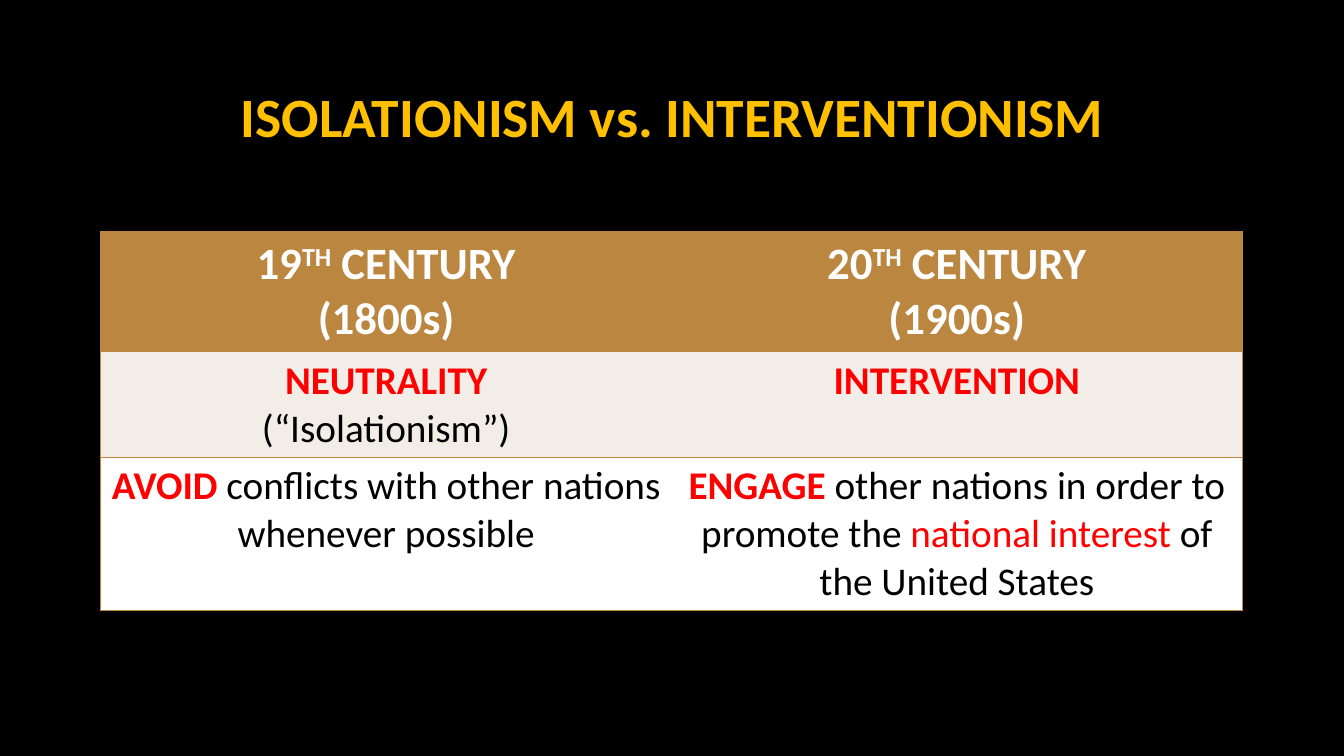
"""Build the slide that sets isolationism against interventionism."""
from dataclasses import dataclass

from lxml import etree
from pptx import Presentation
from pptx.dml.color import RGBColor
from pptx.enum.text import MSO_ANCHOR, PP_ALIGN
from pptx.oxml.ns import qn
from pptx.table import _Cell
from pptx.text.text import TextFrame
from pptx.util import Inches, Pt

CENTER = PP_ALIGN.CENTER
MIDDLE = MSO_ANCHOR.MIDDLE
BLACK = RGBColor(0x00, 0x00, 0x00)
WHITE = RGBColor(0xFF, 0xFF, 0xFF)
GOLD = RGBColor(0xFF, 0xC0, 0x00)
BROWN = RGBColor(0xBB, 0x86, 0x40)
CREAM = RGBColor(0xF3, 0xED, 0xE8)
RED = RGBColor(0xFF, 0x00, 0x00)
FONT = "Calibri"
PLAIN_STYLE = "{2D5ABB26-0587-4C30-8999-92F81FD0307C}"


@dataclass
class Span:
    text: str
    color: RGBColor = BLACK
    bold: bool = False
    raised: bool = False


Lines = list[list[Span]]


@dataclass
class Row:
    height: float
    fill: RGBColor
    size: float
    cells: list[Lines]


def header(number: str, years: str) -> Lines:
    return [
        [Span(number, WHITE, True), Span("TH", WHITE, True, True),
         Span(" CENTURY", WHITE, True)],
        [Span(years, WHITE, True)],
    ]


ROWS = [
    Row(1.19, BROWN, 32, [header("19", "(1800s)"), header("20", "(1900s)")]),
    Row(1.05, CREAM, 28, [
        [[Span("NEUTRALITY", RED, True)], [Span("(“Isolationism”)")]],
        [[Span("INTERVENTION", RED, True)]],
    ]),
    Row(1.52, WHITE, 28, [
        [[Span("AVOID", RED, True),
          Span(" conflicts with other nations whenever possible")]],
        [[Span("ENGAGE", RED, True),
          Span(" other nations in order to promote the "),
          Span("national interest ", RED),
          Span("of the United States")]],
    ]),
]


def write(frame: TextFrame, lines: Lines, size: float) -> None:
    frame.word_wrap = True
    for i, line in enumerate(lines):
        para = frame.add_paragraph() if i else frame.paragraphs[0]
        para.alignment = CENTER
        for span in line:
            run = para.add_run()
            run.text = span.text
            font = run.font
            font.name = FONT
            font.size = Pt(size)
            font.bold = span.bold
            font.color.rgb = span.color
            if span.raised:
                run._r.get_or_add_rPr().set("baseline", "30000")


def border(cell: _Cell, sides: str) -> None:
    props = cell._tc.get_or_add_tcPr()
    for side in sides:
        line = etree.SubElement(props, qn(f"a:ln{side}"), w=str(Pt(1)))
        fill = etree.SubElement(line, qn("a:solidFill"))
        etree.SubElement(fill, qn("a:srgbClr"), val=str(BROWN))


def main() -> None:
    deck = Presentation()
    deck.slide_width = Inches(13.33)
    deck.slide_height = Inches(7.5)
    slide = deck.slides.add_slide(deck.slide_layouts[6])
    back = slide.background.fill
    back.solid()
    back.fore_color.rgb = BLACK

    title = slide.shapes.add_textbox(
        Inches(0.74), Inches(0.49), Inches(11.86), Inches(1.31)).text_frame
    title.vertical_anchor = MIDDLE
    write(title, [[Span("ISOLATIONISM vs. INTERVENTIONISM", GOLD, True)]], 39.6)

    height = sum(row.height for row in ROWS)
    table = slide.shapes.add_table(
        len(ROWS), 2, Inches(1), Inches(2.3), Inches(11.32), Inches(height)).table
    table._tbl.tblPr.find(qn("a:tableStyleId")).text = PLAIN_STYLE
    for r, row in enumerate(ROWS):
        table.rows[r].height = Inches(row.height)
        for c, lines in enumerate(row.cells):
            cell = table.cell(r, c)
            border(cell, ("L", "R")[c] + "TB")
            cell.fill.solid()
            cell.fill.fore_color.rgb = row.fill
            write(cell.text_frame, lines, row.size)

    deck.save("out.pptx")


if __name__ == "__main__":
    main()
